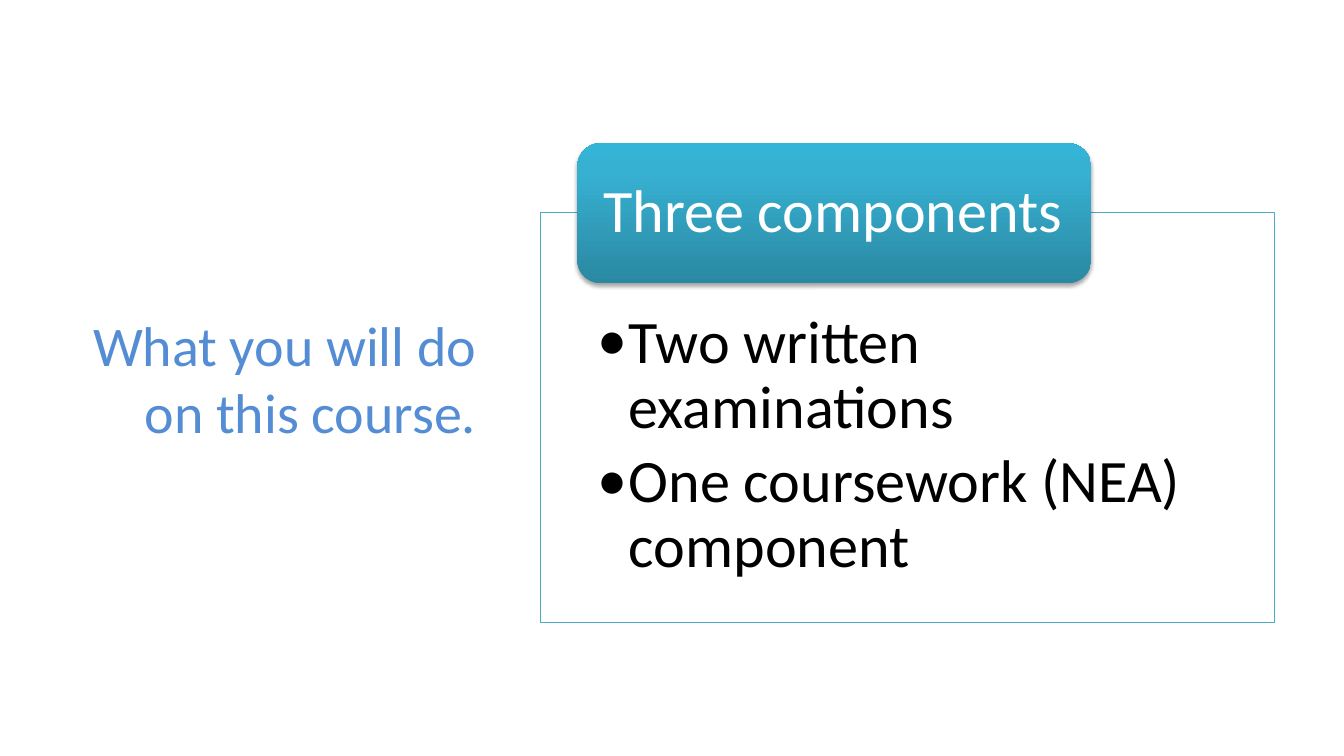
from copy import deepcopy

from lxml.etree import SubElement
from pptx import Presentation
from pptx.dml.color import RGBColor
from pptx.enum.shapes import MSO_SHAPE as Preset
from pptx.enum.text import MSO_ANCHOR as Anchor, MSO_AUTO_SIZE as AutoSize, PP_ALIGN as Align
from pptx.oxml.ns import qn
from pptx.util import Cm, Pt

COLORS = {
    "title": "548DD4",
    "text": "000000",
    "white": "FFFFFF",
    "outline": "4BACC6",
    "badge_dark": "2A88A2",
    "badge_mid": "37B1D2",
    "badge_light": "34B4D6",
}


class CourseSlide:
    """Holds the style and the slide, with a method for each kind of element."""

    font = "Calibri"

    def __init__(self, prs):
        self.slide = prs.slides.add_slide(prs.slide_layouts[1])
        self.body = self.slide.placeholders[1]

    def color(self, name):
        return RGBColor.from_string(COLORS[name])

    def place(self, shape, box):
        shape.left, shape.top, shape.width, shape.height = map(Cm, box)

    def set_text(self, shape, text, size, color, align, anchor, insets, spacing=1.0, after=0):
        frame = shape.text_frame
        frame.text = text
        frame.word_wrap = True
        frame.auto_size = AutoSize.NONE
        frame.vertical_anchor = anchor
        frame.margin_left, frame.margin_top, frame.margin_right, frame.margin_bottom = map(Cm, insets)
        for paragraph in frame.paragraphs:
            paragraph.alignment = align
            paragraph.line_spacing = spacing
            paragraph.space_before = Pt(0)
            paragraph.space_after = Pt(after)
            for run in paragraph.runs:
                run.font.name = self.font
                run.font.size = Pt(size)
                run.font.color.rgb = self.color(color)

    def title(self, text, box):
        heading = self.slide.shapes.title
        self.place(heading, box)
        self.set_text(heading, text, 40, "title", Align.RIGHT, Anchor.BOTTOM, (0.25, 0.13, 0.25, 0.13))

    def frame(self, box):
        panel = self.slide.shapes.add_shape(Preset.RECTANGLE, *map(Cm, box))
        panel.shadow.inherit = False
        panel.fill.solid()
        panel.fill.fore_color.rgb = self.color("white")
        tint = panel.element.spPr.find(qn("a:solidFill"))[0]
        SubElement(tint, qn("a:alpha"), val="90000")
        panel.line.color.rgb = self.color("outline")
        panel.line.width = Pt(0.75)
        self.body.element.addprevious(panel.element)

    def bullets(self, items, box):
        self.place(self.body, box)
        self.set_text(self.body, "\n".join(items), 43, "text", Align.LEFT, Anchor.TOP,
                      (1.45, 2.49, 1.45, 0.84), 0.9, 6.5)
        for paragraph in self.body.text_frame.paragraphs:
            paragraph.level = 1
            properties = paragraph._p.get_or_add_pPr()
            properties.set("marL", str(Cm(0.79)))
            properties.set("indent", str(-Cm(0.79)))
            SubElement(properties, qn("a:buFont"), typeface=self.font)
            SubElement(properties, qn("a:buChar"), char="•")

    def badge(self, text, box):
        label = self.slide.shapes.add_shape(Preset.ROUNDED_RECTANGLE, *map(Cm, box))
        label.line.fill.background()
        label.fill.gradient()
        label.fill.gradient_angle = 90
        stops = label.element.spPr.find(qn("a:gradFill")).find(qn("a:gsLst"))
        stops.append(deepcopy(stops[-1]))
        shades = ((0, "badge_dark"), (0.8, "badge_mid"), (1, "badge_light"))
        for stop, (position, shade) in zip(label.fill.gradient_stops, shades):
            stop.position = position
            stop.color.rgb = self.color(shade)
        label.shadow.inherit = False
        effects = label.element.spPr.find(qn("a:effectLst"))
        shadow = SubElement(effects, qn("a:outerShdw"), blurRad=str(Pt(3.1)), dist=str(Pt(1.8)),
                            dir="5400000", rotWithShape="0")
        black = SubElement(shadow, qn("a:srgbClr"), val=COLORS["text"])
        SubElement(black, qn("a:alpha"), val="35000")
        self.set_text(label, text, 43, "white", Align.LEFT, Anchor.MIDDLE, (0.48, 0, 0.2, 0), 0.9)


def main():
    prs = Presentation()
    prs.slide_width, prs.slide_height = Cm(33.87), Cm(19.05)
    course = CourseSlide(prs)
    components_box = (13.61, 5.36, 18.52, 10.34)
    course.title("What you will do on this course.", (1.63, 4.75, 10.62, 6.58))
    course.frame(components_box)
    course.bullets(["Two written examinations", "One coursework (NEA) component"], components_box)
    course.badge("Three components", (14.55, 3.61, 12.95, 3.53))
    prs.save("out.pptx")


if __name__ == "__main__":
    main()
